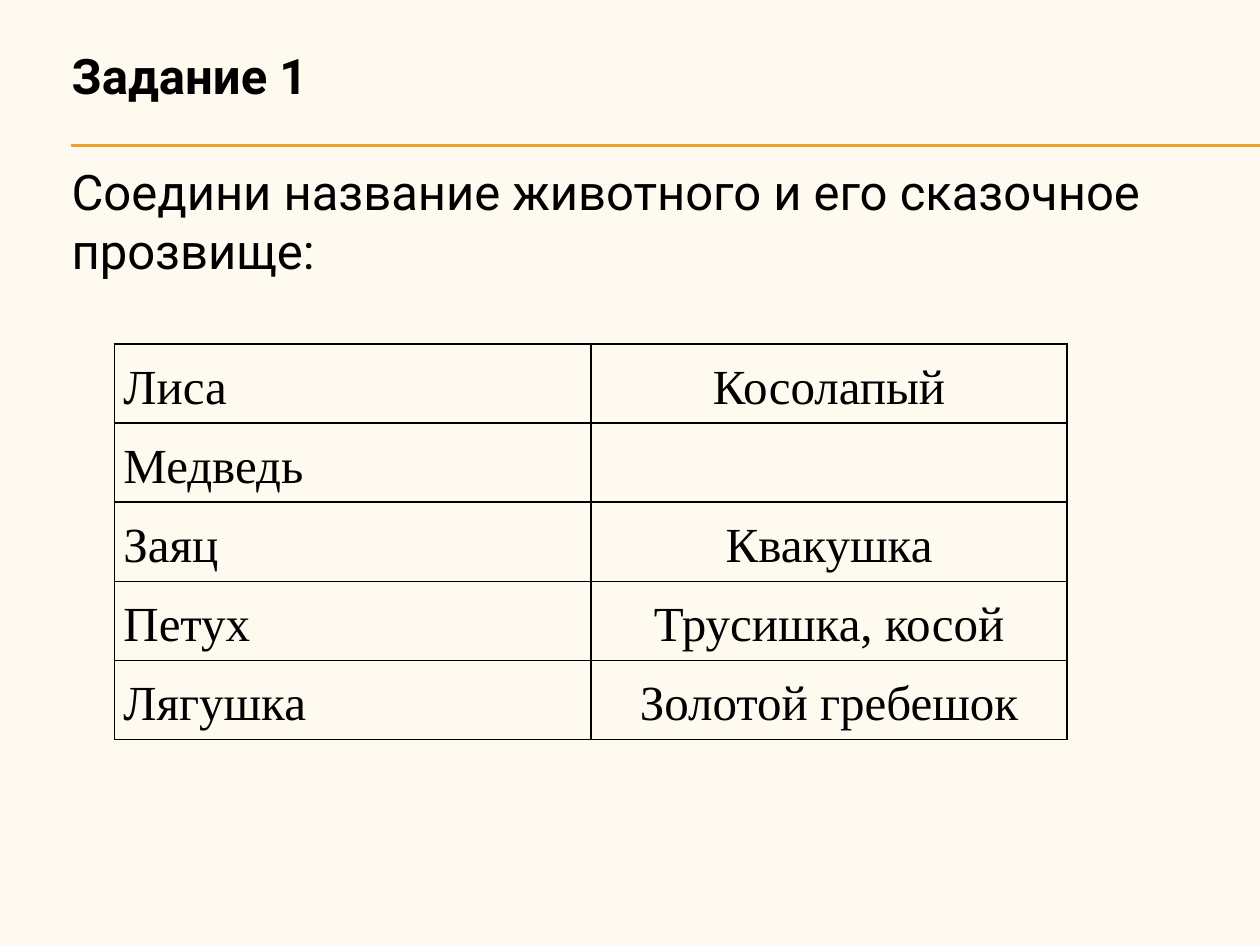
import pptx
import pptx.util
import pptx.dml.color
import pptx.enum.shapes
import pptx.enum.text
import pptx.oxml
import pptx.oxml.ns
from dataclasses import dataclass

Inches, Pt = pptx.util.Inches, pptx.util.Pt
RGB = pptx.dml.color.RGBColor.from_string


@dataclass
class Theme:
    background: str = "FEFAEF"
    accent: str = "F0A22E"
    ink: str = "000000"
    heading_font: str = "Roboto"
    table_font: str = "Times New Roman"
    size: int = 28


theme = Theme()


def set_font(p, name, bold=False):
    p.font.name = name
    p.font.size = Pt(theme.size)
    p.font.bold = bold
    p.font.color.rgb = RGB(theme.ink)


prs = pptx.Presentation()
prs.slide_width, prs.slide_height = Inches(10), Inches(7.5)
s = prs.slides.add_slide(prs.slide_layouts[6])
s.background.fill.solid()
s.background.fill.fore_color.rgb = RGB(theme.background)

# Double rule under the heading
for y in (1.15, 1.16):
    rule = s.shapes.add_connector(pptx.enum.shapes.MSO_CONNECTOR.STRAIGHT,
                                  Inches(0.56), Inches(y), Inches(10), Inches(y))
    rule.line.color.rgb = RGB(theme.accent)
    rule.line.width = Pt(0.75)
    rule._element.spPr.append(pptx.oxml.parse_xml(
        f'<a:effectLst {pptx.oxml.ns.nsdecls("a")}/>'))

# Heading and task
sp = s.shapes.add_textbox(Inches(0.47), Inches(0.31), Inches(9.53), Inches(1.99))
tf = sp.text_frame
tf.word_wrap = True
p = tf.paragraphs[0]
p.text = "Задание 1"
set_font(p, theme.heading_font, bold=True)
p = tf.add_paragraph()
p.text = "Соедини название животного и его сказочное прозвище:"
p.space_before = Pt(33)
set_font(p, theme.heading_font)

# Table of animals and nicknames
rows = [
    ("Лиса", "Косолапый"),
    ("Медведь", ""),
    ("Заяц", "Квакушка"),
    ("Петух", "Трусишка, косой"),
    ("Лягушка", "Золотой гребешок"),
]
aligns = (pptx.enum.text.PP_ALIGN.LEFT, pptx.enum.text.PP_ALIGN.CENTER)
table = s.shapes.add_table(len(rows), 2, Inches(0.91), Inches(2.73),
                           Inches(7.56), Inches(3.14)).table
table.first_row = table.horz_banding = False
for row, texts in zip(table.rows, rows):
    for cell, text, align in zip(row.cells, texts, aligns):
        cell.margin_left = cell.margin_right = Inches(0.07)
        cell.margin_top = cell.margin_bottom = 0
        cell.vertical_anchor = pptx.enum.text.MSO_ANCHOR.MIDDLE
        tcPr = cell._tc.get_or_add_tcPr()
        for side in ("lnL", "lnR", "lnT", "lnB"):
            tcPr.append(pptx.oxml.parse_xml(
                f'<a:{side} {pptx.oxml.ns.nsdecls("a")} w="{Pt(1)}"><a:solidFill>'
                f'<a:srgbClr val="{theme.ink}"/></a:solidFill></a:{side}>'))
        cell.fill.background()
        p = cell.text_frame.paragraphs[0]
        if text:
            p.text = text
        p.alignment = align
        p.line_spacing = 1.15
        set_font(p, theme.table_font)

prs.save("out.pptx")
